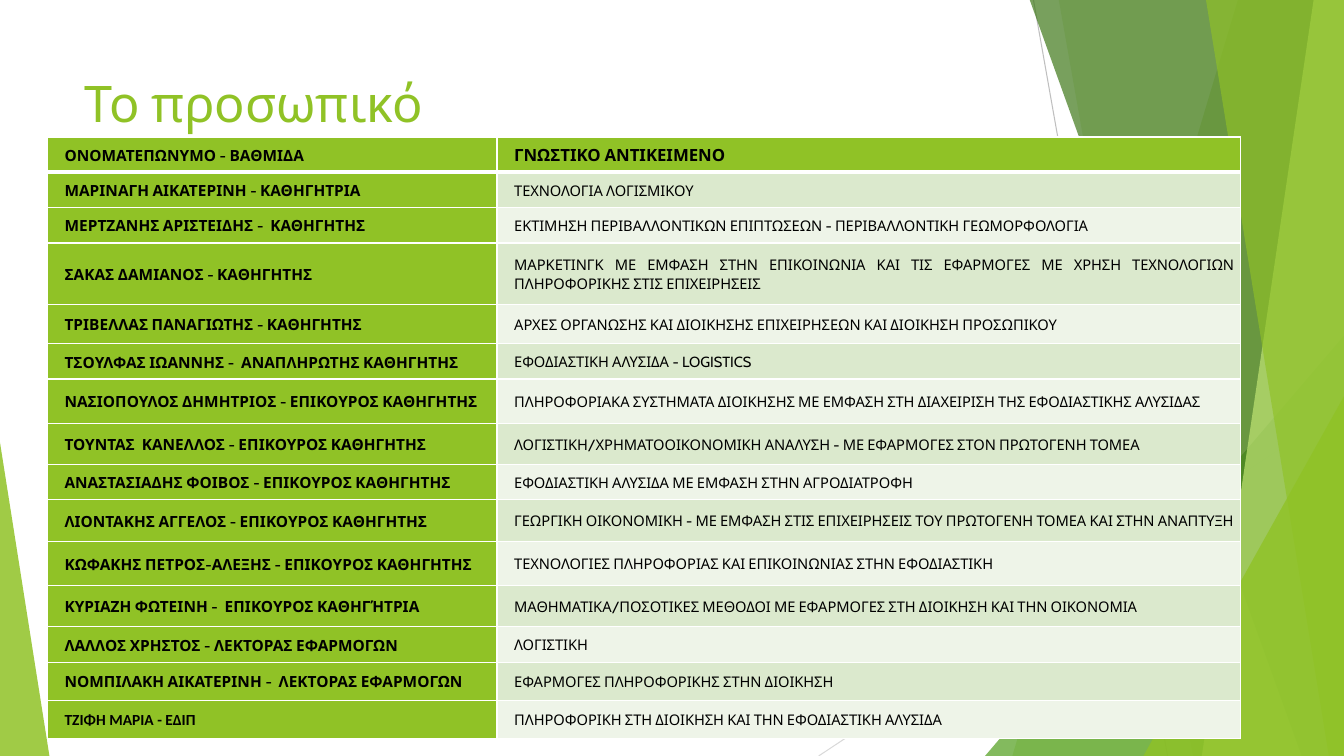
from lxml import etree
from pptx import Presentation
from pptx.dml.color import RGBColor
from pptx.enum.shapes import MSO_CONNECTOR, MSO_SHAPE
from pptx.enum.text import MSO_ANCHOR, MSO_AUTO_SIZE, PP_ALIGN
from pptx.oxml.ns import qn
from pptx.util import Inches, Pt

TRIANGLE = MSO_SHAPE.ISOSCELES_TRIANGLE
STRAIGHT = MSO_CONNECTOR.STRAIGHT
TOP, MIDDLE = MSO_ANCHOR.TOP, MSO_ANCHOR.MIDDLE
LEFT, JUSTIFY = PP_ALIGN.LEFT, PP_ALIGN.JUSTIFY
NO_AUTOFIT = MSO_AUTO_SIZE.NONE

WIDTH, HEIGHT = 13.33, 7.5
FONT, ALTERNATE_FONT = "Cabin", "Calibri"
COLORS = {
    "green": "90C226", "leaf": "54A021", "forest": "3F7819", "lime": "C0E474",
    "band": "DBE9CD", "pale": "EEF4E8", "white": "FFFFFF", "black": "000000",
    "gray": "BFBFBF", "silver": "D9D9D9",
}
COLUMN_WIDTHS = [4.46, 7.37]
HEADER = ("ΟΝΟΜΑΤΕΠΩΝΥΜΟ - ΒΑΘΜΙΔΑ", "ΓΝΩΣΤΙΚΟ ΑΝΤΙΚΕΙΜΕΝΟ", 0.35)
STAFF = [
    ("ΜΑΡΙΝΑΓΗ ΑΙΚΑΤΕΡΙΝΗ - ΚΑΘΗΓΗΤΡΙΑ", "ΤΕΧΝΟΛΟΓΙΑ ΛΟΓΙΣΜΙΚΟΥ", 0.35),
    ("ΜΕΡΤΖΑΝΗΣ ΑΡΙΣΤΕΙΔΗΣ -  ΚΑΘΗΓΗΤΗΣ",
     "ΕΚΤΙΜΗΣΗ ΠΕΡΙΒΑΛΛΟΝΤΙΚΩΝ ΕΠΙΠΤΩΣΕΩΝ - ΠΕΡΙΒΑΛΛΟΝΤΙΚΗ ΓΕΩΜΟΡΦΟΛΟΓΙΑ", 0.35),
    ("ΣΑΚΑΣ ΔΑΜΙΑΝΟΣ - ΚΑΘΗΓΗΤΗΣ",
     "ΜΑΡΚΕΤΙΝΓΚ ΜΕ ΕΜΦΑΣΗ ΣΤΗΝ ΕΠΙΚΟΙΝΩΝΙΑ ΚΑΙ ΤΙΣ ΕΦΑΡΜΟΓΕΣ ΜΕ ΧΡΗΣΗ "
     "ΤΕΧΝΟΛΟΓΙΩΝ ΠΛΗΡΟΦΟΡΙΚΗΣ ΣΤΙΣ ΕΠΙΧΕΙΡΗΣΕΙΣ", 0.61),
    ("ΤΡΙΒΕΛΛΑΣ ΠΑΝΑΓΙΩΤΗΣ - ΚΑΘΗΓΗΤΗΣ",
     "ΑΡΧΕΣ ΟΡΓΑΝΩΣΗΣ ΚΑΙ ΔΙΟΙΚΗΣΗΣ ΕΠΙΧΕΙΡΗΣΕΩΝ ΚΑΙ ΔΙΟΙΚΗΣΗ ΠΡΟΣΩΠΙΚΟΥ", 0.39),
    ("ΤΣΟΥΛΦΑΣ ΙΩΑΝΝΗΣ -  ΑΝΑΠΛΗΡΩΤΗΣ ΚΑΘΗΓΗΤΗΣ", "ΕΦΟΔΙΑΣΤΙΚΗ ΑΛΥΣΙΔΑ - LOGISTICS", 0.35),
    ("ΝΑΣΙΟΠΟΥΛΟΣ ΔΗΜΗΤΡΙΟΣ - ΕΠΙΚΟΥΡΟΣ ΚΑΘΗΓΗΤΗΣ",
     "ΠΛΗΡΟΦΟΡΙΑΚΑ ΣΥΣΤΗΜΑΤΑ ΔΙΟΙΚΗΣΗΣ ΜΕ ΕΜΦΑΣΗ ΣΤΗ ΔΙΑΧΕΙΡΙΣΗ ΤΗΣ "
     "ΕΦΟΔΙΑΣΤΙΚΗΣ ΑΛΥΣΙΔΑΣ", 0.44),
    ("ΤΟΥΝΤΑΣ  ΚΑΝΕΛΛΟΣ - ΕΠΙΚΟΥΡΟΣ ΚΑΘΗΓΗΤΗΣ",
     "ΛΟΓΙΣΤΙΚΗ/ΧΡΗΜΑΤΟΟΙΚΟΝΟΜΙΚΗ ΑΝΑΛΥΣΗ - ΜΕ ΕΦΑΡΜΟΓΕΣ ΣΤΟΝ ΠΡΩΤΟΓΕΝΗ ΤΟΜΕΑ", 0.41),
    ("ΑΝΑΣΤΑΣΙΑΔΗΣ ΦΟΙΒΟΣ - ΕΠΙΚΟΥΡΟΣ ΚΑΘΗΓΗΤΗΣ",
     "ΕΦΟΔΙΑΣΤΙΚΗ ΑΛΥΣΙΔΑ ΜΕ ΕΜΦΑΣΗ ΣΤΗΝ ΑΓΡΟΔΙΑΤΡΟΦΗ", 0.35),
    ("ΛΙΟΝΤΑΚΗΣ ΑΓΓΕΛΟΣ - ΕΠΙΚΟΥΡΟΣ ΚΑΘΗΓΗΤΗΣ",
     "ΓΕΩΡΓΙΚΗ ΟΙΚΟΝΟΜΙΚΗ - ΜΕ ΕΜΦΑΣΗ ΣΤΙΣ ΕΠΙΧΕΙΡΗΣΕΙΣ ΤΟΥ ΠΡΩΤΟΓΕΝΗ "
     "ΤΟΜΕΑ ΚΑΙ ΣΤΗΝ ΑΝΑΠΤΥΞΗ", 0.41),
    ("ΚΩΦΑΚΗΣ ΠΕΤΡΟΣ-ΑΛΕΞΗΣ - ΕΠΙΚΟΥΡΟΣ ΚΑΘΗΓΗΤΗΣ",
     "ΤΕΧΝΟΛΟΓΙΕΣ ΠΛΗΡΟΦΟΡΙΑΣ ΚΑΙ ΕΠΙΚΟΙΝΩΝΙΑΣ ΣΤΗΝ ΕΦΟΔΙΑΣΤΙΚΗ", 0.44),
    ("ΚΥΡΙΑΖΗ ΦΩΤΕΙΝΗ -  ΕΠΙΚΟΥΡΟΣ ΚΑΘΗΓΉΤΡΙΑ",
     "ΜΑΘΗΜΑΤΙΚΑ/ΠΟΣΟΤΙΚΕΣ ΜΕΘΟΔΟΙ ΜΕ ΕΦΑΡΜΟΓΕΣ ΣΤΗ ΔΙΟΙΚΗΣΗ ΚΑΙ ΤΗΝ ΟΙΚΟΝΟΜΙΑ", 0.41),
    ("ΛΑΛΛΟΣ ΧΡΗΣΤΟΣ - ΛΕΚΤΟΡΑΣ ΕΦΑΡΜΟΓΩΝ", "ΛΟΓΙΣΤΙΚΗ", 0.35),
    ("ΝΟΜΠΙΛΑΚΗ ΑΙΚΑΤΕΡΙΝΗ -  ΛΕΚΤΟΡΑΣ ΕΦΑΡΜΟΓΩΝ",
     "ΕΦΑΡΜΟΓΕΣ ΠΛΗΡΟΦΟΡΙΚΗΣ ΣΤΗΝ ΔΙΟΙΚΗΣΗ", 0.38),
    ("ΤΖΙΦΗ ΜΑΡΙΑ - ΕΔΙΠ", "ΠΛΗΡΟΦΟΡΙΚΗ ΣΤΗ ΔΙΟΙΚΗΣΗ ΚΑΙ ΤΗΝ ΕΦΟΔΙΑΣΤΙΚΗ ΑΛΥΣΙΔΑ", 0.38),
]


def rgb(name):
    """Return the named palette colour."""
    return RGBColor.from_string(COLORS[name])


def style_facet(shape, color, opacity):
    """Give a facet a translucent fill with no line or shadow."""
    shape.shadow.inherit = False
    shape.fill.solid()
    shape.fill.fore_color.rgb = rgb(color)
    shape.line.fill.background()
    color_element = shape.fill._xPr.find(qn("a:solidFill"))[0]
    etree.SubElement(color_element, qn("a:alpha"), val=str(opacity * 1000))


def add_hairline(slide, start, end, color):
    """Draw a thin line between two points."""
    line = slide.shapes.add_connector(STRAIGHT, *map(Inches, start + end))
    line.line.color.rgb = rgb(color)
    line.line.width = Pt(0.75)
    etree.SubElement(line._element.spPr, qn("a:effectLst"))


def add_band(slide, right, bottom, top_x, bottom_x, color, opacity):
    """Draw a slanted band that reaches the right edge."""
    top = -0.01
    corners = [(right, top), (right, bottom), (bottom_x, bottom)]
    builder = slide.shapes.build_freeform(Inches(top_x), Inches(top))
    builder.add_line_segments([(Inches(x), Inches(y)) for x, y in corners])
    style_facet(builder.convert_to_shape(), color, opacity)


def add_triangle(slide, left, bottom, width, height, apex, color, opacity):
    """Draw a right triangle standing on the bottom edge."""
    box = map(Inches, (left, bottom - height, width, height))
    triangle = slide.shapes.add_shape(TRIANGLE, *box)
    triangle.adjustments[0] = apex
    style_facet(triangle, color, opacity)


def add_facets(slide, width, height):
    """Draw the faceted backdrop along the slide's edges."""
    add_hairline(slide, (10.25, 0), (11.58, height), "gray")
    add_hairline(slide, (width, 4.03), (8.12, height), "silver")
    add_band(slide, width, height, 12.28, 10.04, "green", 30)
    add_band(slide, width, height, 10.5, 11.83, "green", 20)
    add_triangle(slide, width - 3.56, height, 3.56, 4.17, 1, "leaf", 72)
    add_band(slide, width, height, 10.21, 12.91, "forest", 70)
    add_band(slide, width, height, 13.03, 11.92, "lime", 70)
    add_band(slide, width, height, 11.96, 13.18, "green", 65)
    add_triangle(slide, width - 1.99, height, 1.99, 3.57, 1, "green", 80)
    add_triangle(slide, 0, height, 0.49, 3.11, 0, "green", 85)


def format_runs(paragraph, size, font, color, bold):
    """Format every run of a paragraph."""
    for run in paragraph.runs:
        run.font.size = Pt(size)
        run.font.name = font
        run.font.color.rgb = rgb(color)
        run.font.bold = bold


def add_title(slide, left, top, width, height):
    """Place the slide title in its placeholder."""
    title = slide.shapes.title
    title.left, title.top = Inches(left), Inches(top)
    title.width, title.height = Inches(width), Inches(height)
    frame = title.text_frame
    frame.text = "Το προσωπικό"
    frame.auto_size = NO_AUTOFIT
    frame.vertical_anchor = TOP
    paragraph = frame.paragraphs[0]
    paragraph.alignment = LEFT
    format_runs(paragraph, 36, FONT, "green", False)


def set_borders(cell, top, bottom):
    """Give a cell white borders, with top and bottom widths in points."""
    properties = cell._tc.get_or_add_tcPr()
    for index, (side, width) in enumerate([("L", 1), ("R", 1), ("T", top), ("B", bottom)]):
        line = etree.Element(qn(f"a:ln{side}"), w=str(Pt(width)))
        fill = etree.SubElement(line, qn("a:solidFill"))
        etree.SubElement(fill, qn("a:srgbClr"), val=COLORS["white"])
        properties.insert(index, line)


def fill_cell(cell, text, fill, size, font, bold):
    """Write and format one table cell."""
    cell.fill.solid()
    cell.fill.fore_color.rgb = rgb(fill)
    cell.vertical_anchor = MIDDLE
    cell.margin_left = cell.margin_right = Inches(0.05)
    cell.margin_top, cell.margin_bottom = Inches(0.01), 0
    cell.text_frame.text = text
    paragraph = cell.text_frame.paragraphs[0]
    paragraph.alignment = JUSTIFY
    paragraph.line_spacing = 1.07
    paragraph.space_after = Pt(12)
    properties = paragraph._p.get_or_add_pPr()
    properties.set("marL", str(Inches(0.12)))
    properties.set("indent", "0")
    format_runs(paragraph, size, font, "black", bold)


def add_staff_table(slide, left, top, width, height):
    """Draw the table of staff members and their subjects."""
    rows = [HEADER] + STAFF
    box = map(Inches, (left, top, width, height))
    table = slide.shapes.add_table(len(rows), len(COLUMN_WIDTHS), *box).table
    for column, column_width in zip(table.columns, COLUMN_WIDTHS):
        column.width = Inches(column_width)
    for index, (name, subject, row_height) in enumerate(rows):
        table.rows[index].height = Inches(row_height)
        is_header = index == 0
        name_font = ALTERNATE_FONT if index == len(STAFF) else FONT
        subject_fill = "green" if is_header else "band" if index % 2 else "pale"
        subject_size = 12 if is_header else 10.5
        name_cell, subject_cell = table.rows[index].cells
        fill_cell(name_cell, name, "green", 11, name_font, True)
        fill_cell(subject_cell, subject, subject_fill, subject_size, FONT, is_header)
        for cell in (name_cell, subject_cell):
            set_borders(cell, 3 if index == 1 else 1, 3 if is_header else 1)


def main():
    """Build and save the staff slide."""
    presentation = Presentation()
    presentation.slide_width, presentation.slide_height = Inches(WIDTH), Inches(HEIGHT)
    slide = presentation.slides.add_slide(presentation.slide_layouts[5])
    add_facets(slide, WIDTH, HEIGHT)
    add_title(slide, 0.74, 0.67, 9.4, 1.44)
    add_staff_table(slide, 0.47, 1.36, 11.83, 5.95)
    presentation.save("out.pptx")


if __name__ == "__main__":
    main()
